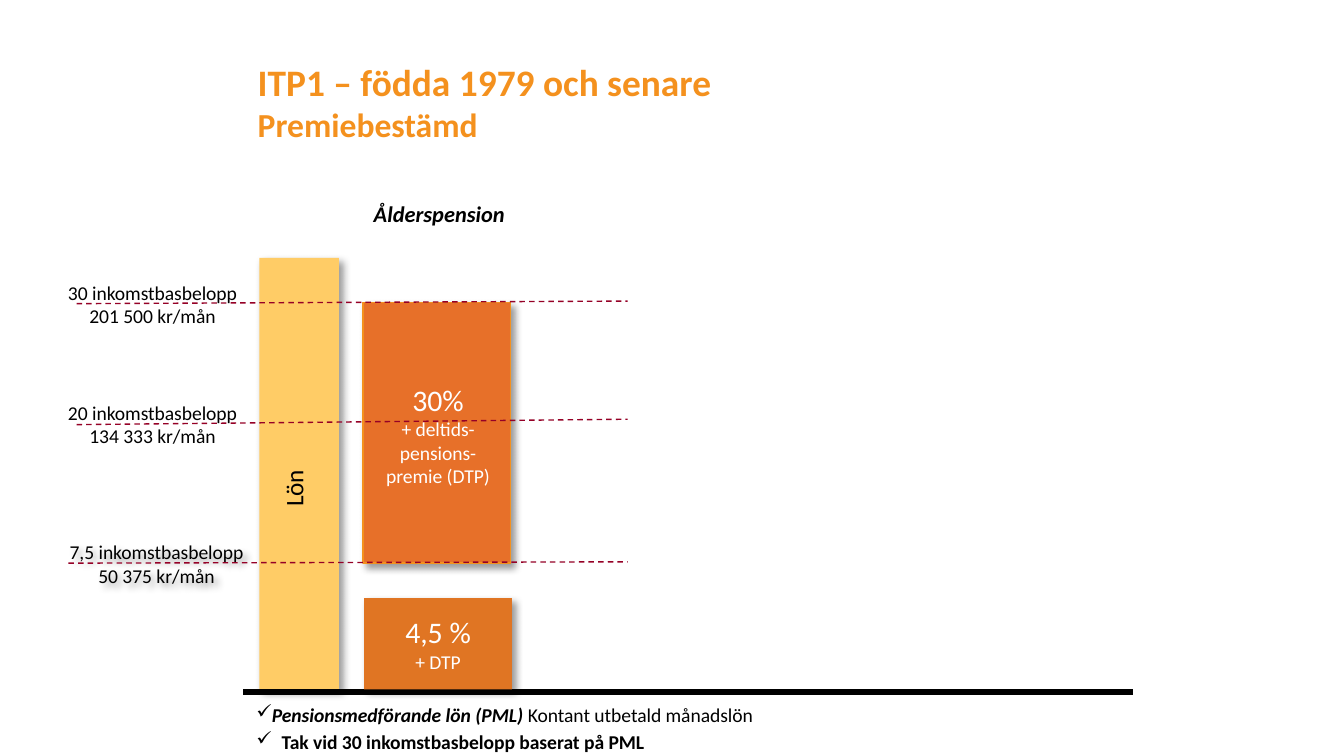
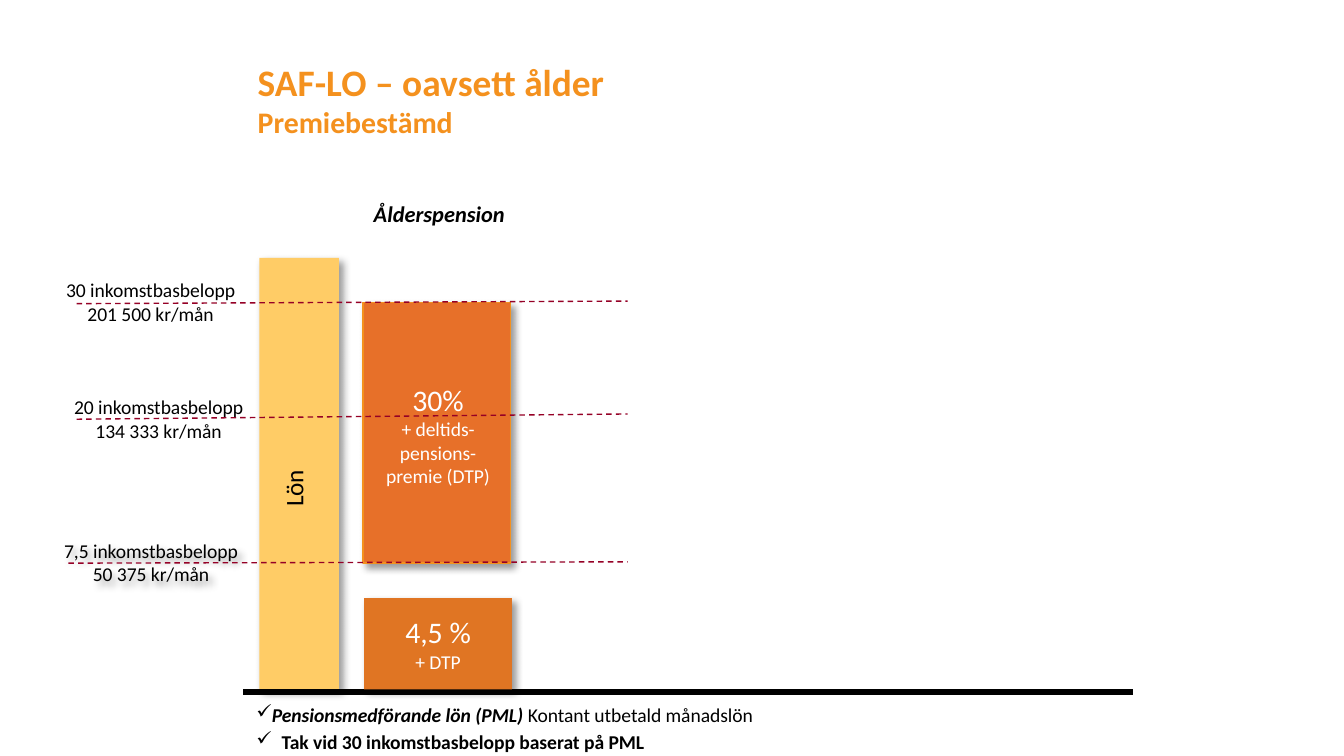
from dataclasses import dataclass

from lxml import etree
from pptx import Presentation
from pptx.dml.color import RGBColor
from pptx.enum.dml import MSO_LINE
from pptx.enum.shapes import MSO_CONNECTOR, MSO_SHAPE
from pptx.enum.text import MSO_ANCHOR, PP_ALIGN
from pptx.oxml.ns import qn
from pptx.util import Pt

RECT = MSO_SHAPE.RECTANGLE
STRAIGHT = MSO_CONNECTOR.STRAIGHT
DASH = MSO_LINE.DASH
LEFT, CENTER = PP_ALIGN.LEFT, PP_ALIGN.CENTER
TOP, MIDDLE = MSO_ANCHOR.TOP, MSO_ANCHOR.MIDDLE


@dataclass(frozen=True)
class Theme:
    font: str = "Calibri"
    title: str = "F4911E"
    pay: str = "FFCC66"
    upper: str = "E77029"
    lower: str = "E07523"
    limit: str = "950026"
    ink: str = "000000"
    white: str = "FFFFFF"
    title_size: float = 20
    rate_size: float = 16
    pay_size: float = 13.5
    heading_size: float = 12
    body_size: float = 10.5


T = Theme()

# Regions: left, top, width, height in points
TITLE_BOX = (131, 28, 475, 76)
CHART_BOX = (130.3, 107.3, 476.6, 263.5)
LIMIT_BOX = (30, 150, 306.2, 165)
NOTES_BOX = (130.3, 373, 476.6, 20)

LIMIT_TEXTS = [
    "30 inkomstbasbelopp\v201 500 kr/mån",
    "20 inkomstbasbelopp\v134 333 kr/mån",
    "7,5 inkomstbasbelopp\v50 375 kr/mån",
]

# Per limit: label left, top, width; line start x, start y, end y
SLIDES = [
    ("ITP1 – födda 1979 och senare", 18, [
        (5.3, 0.5, 92.9, 11, 12.7, 11.3),
        (5.3, 64.6, 92.9, 11, 77.5, 74.6),
        (5.3, 139.4, 97.2, 6.7, 151.7, 151),
    ]),
    ("SAF-LO – oavsett ålder", 16, [
        (4.6, -1, 92.2, 11, 12.7, 11.3),
        (8.9, 61.7, 92.2, 11, 74.6, 71.8),
        (1.7, 138.7, 98.6, 6.7, 151.7, 151),
    ]),
]


def rgb(value):
    return RGBColor.from_string(value)


def style(p, size, color, bold=False, italic=False, align=LEFT):
    p.alignment = align
    for r in p.runs:
        f = r.font
        f.name, f.size, f.bold, f.italic = T.font, Pt(size), bold, italic
        f.color.rgb = rgb(color)


def add_shadow(sp):
    sp.shadow.inherit = False
    effects = sp._element.spPr.find(qn("a:effectLst"))
    outer = etree.SubElement(effects, qn("a:outerShdw"), blurRad=str(Pt(4)),
                             dist=str(Pt(3)), dir=str(45 * 60000),
                             algn="tl", rotWithShape="0")
    color = etree.SubElement(outer, qn("a:srgbClr"), val=T.ink)
    etree.SubElement(color, qn("a:alpha"), val="40000")


def set_insets(tf, x=0, y=0):
    tf.margin_left = tf.margin_right = Pt(x)
    tf.margin_top = tf.margin_bottom = Pt(y)


def add_text(s, x, y, w, h, text, inset=(0, 0)):
    sp = s.shapes.add_textbox(Pt(x), Pt(y), Pt(w), Pt(h))
    tf = sp.text_frame
    tf.word_wrap = True
    tf.vertical_anchor = TOP
    set_insets(tf, *inset)
    tf.text = text
    return sp


def add_bar(s, x, y, w, h, fill, line=None):
    sp = s.shapes.add_shape(RECT, Pt(x), Pt(y), Pt(w), Pt(h))
    sp.fill.solid()
    sp.fill.fore_color.rgb = rgb(fill)
    if line:
        sp.line.color.rgb = rgb(line)
        sp.line.width = Pt(0.75)
    else:
        sp.line.fill.background()
    add_shadow(sp)
    return sp


def add_line(s, x1, y1, x2, y2, color, width, dash=None):
    c = s.shapes.add_connector(STRAIGHT, Pt(x1), Pt(y1), Pt(x2), Pt(y2))
    c.line.color.rgb = rgb(color)
    c.line.width = Pt(width)
    if dash:
        c.line.dash_style = dash
    etree.SubElement(c._element.spPr, qn("a:effectLst"))


def style_rate(tf):
    for p, size in zip(tf.paragraphs, (T.rate_size, T.body_size)):
        style(p, size, T.white, align=CENTER)


def add_title(s, box, title, subtitle_size):
    sp = add_text(s, *box, f"{title}\nPremiebestämd", inset=(7.2, 3.6))
    for p, size in zip(sp.text_frame.paragraphs, (T.title_size, subtitle_size)):
        style(p, size, T.title, bold=True)


def add_bars(s, box):
    x, y, w, h = box
    add_bar(s, x + 64.1, y + 54.7, 79.2, 139.7, T.upper, T.title)
    add_bar(s, x + 8.7, y + 30.9, 42.5, 231.1, T.pay)
    add_line(s, x, y + h, x + w, y + h, T.ink, 3)

    # Column heading
    sp = add_text(s, x + 69.9, y, w - 69.9, 14.4, "Ålderspension")
    style(sp.text_frame.paragraphs[0], T.heading_size, T.ink, True, True)

    # Lower premium
    sp = add_bar(s, x + 64.8, y + 213.1, 79.2, 49, T.lower)
    tf = sp.text_frame
    tf.word_wrap = False
    tf.vertical_anchor = MIDDLE
    set_insets(tf)
    tf.text = "4,5 %\n+ DTP"
    style_rate(tf)


def add_bar_captions(s, box):
    x, y = box[:2]
    sp = add_text(s, x + 5.1, y + 137.5, 43.9, 23.8, "Lön", inset=(7.2, 3.6))
    sp.rotation = 270
    style(sp.text_frame.paragraphs[0], T.pay_size, T.ink)

    sp = add_text(s, x + 64.8, y + 93.6, 79.2, 64.8,
                  "30%\n+ deltids-pensions-premie (DTP)", inset=(7.2, 3.6))
    style_rate(sp.text_frame)


def add_limits(s, box, limits):
    x, y, w, _ = box
    for text, (lx, ly, lw, start, y1, y2) in zip(LIMIT_TEXTS, limits):
        sp = add_text(s, x + lx, y + ly, lw, 25.2, text)
        style(sp.text_frame.paragraphs[0], T.body_size, T.ink, align=CENTER)
        add_line(s, x + start, y + y1, x + w, y + y2, T.limit, 0.75, DASH)
    add_shadow(sp)  # only the lowest limit casts a shadow


def add_check(p, indent):
    pPr = p._p.get_or_add_pPr()
    pPr.set("marL", str(Pt(indent)))
    pPr.set("indent", str(-Pt(indent)))
    etree.SubElement(pPr, qn("a:buChar"), char="✓")


def add_notes(s, box):
    sp = add_text(s, *box, "Pensionsmedförande lön (PML) \n"
                  "Tak vid 30 inkomstbasbelopp baserat på PML", inset=(7.2, 3.6))
    first, second = sp.text_frame.paragraphs
    first.add_run().text = "Kontant utbetald månadslön"
    second.space_before = Pt(2)
    add_check(first, 0)
    add_check(second, 13.5)
    style(first, T.body_size, T.ink, True, True)
    plain = first.runs[1].font
    plain.bold = plain.italic = False
    style(second, T.body_size, T.ink, True)


def add_pension_slide(prs, title, subtitle_size, limits):
    s = prs.slides.add_slide(prs.slide_layouts[6])
    add_bars(s, CHART_BOX)
    add_notes(s, NOTES_BOX)
    add_limits(s, LIMIT_BOX, limits)
    add_bar_captions(s, CHART_BOX)
    add_title(s, TITLE_BOX, title, subtitle_size)


def main():
    prs = Presentation()
    prs.slide_width, prs.slide_height = Pt(720), Pt(405)
    for content in SLIDES:
        add_pension_slide(prs, *content)
    prs.save("out.pptx")


if __name__ == "__main__":
    main()
